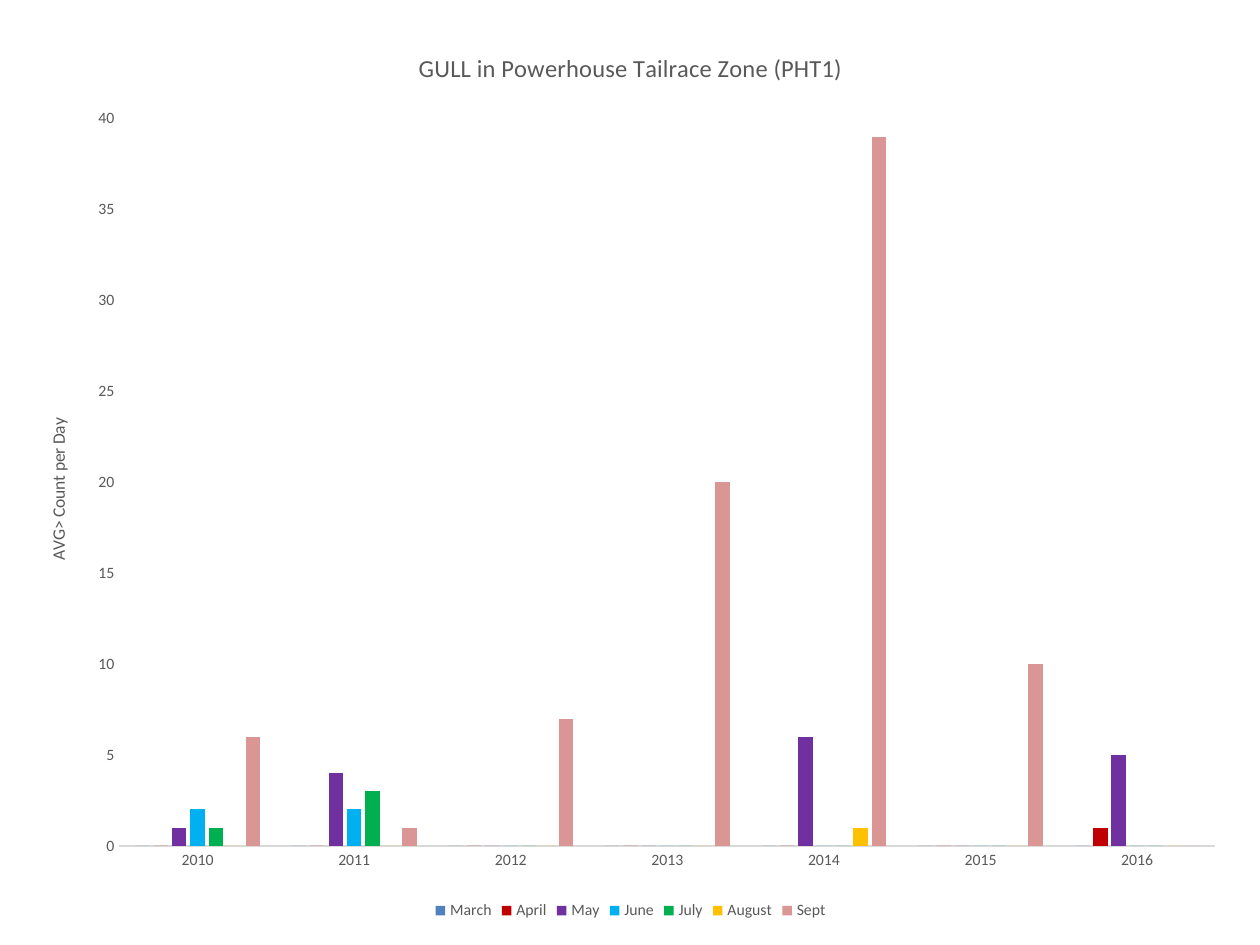
import pptx
import pptx.chart.data
import pptx.dml.color
import pptx.enum.chart
import pptx.util
from dataclasses import dataclass

Inches = pptx.util.Inches
RGB = pptx.dml.color.RGBColor

GREY = RGB(0x59, 0x59, 0x59)
PALE = RGB(0xD9, 0xD9, 0xD9)
BLUE = RGB(0x4F, 0x81, 0xBD)
RED = RGB(0xC0, 0x00, 0x00)
PURPLE = RGB(0x70, 0x30, 0xA0)
SKY = RGB(0x00, 0xB0, 0xF0)
GREEN = RGB(0x00, 0xB0, 0x50)
GOLD = RGB(0xFF, 0xC0, 0x00)
PINK = RGB(0xD9, 0x96, 0x94)

YEARS = [str(year) for year in range(2010, 2017)]


@dataclass
class Month:
    name: str
    color: RGB
    counts: tuple[int, ...]


MONTHS = [
    Month("March", BLUE, (0, 0, 0, 0, 0, 0, 0)),
    Month("April", RED, (0, 0, 0, 0, 0, 0, 1)),
    Month("May", PURPLE, (1, 4, 0, 0, 6, 0, 5)),
    Month("June", SKY, (2, 2, 0, 0, 0, 0, 0)),
    Month("July", GREEN, (1, 3, 0, 0, 0, 0, 0)),
    Month("August", GOLD, (0, 0, 0, 0, 1, 0, 0)),
    Month("Sept", PINK, (6, 1, 7, 20, 39, 10, 0)),
]


def set_font(font: pptx.text.text.Font, size: float) -> None:
    font.name = "Calibri"
    font.size = pptx.util.Pt(size)
    font.bold = False
    font.color.rgb = GREY


def add_title(frame: pptx.text.text.TextFrame, text: str, size: float) -> None:
    run = frame.paragraphs[0].add_run()
    run.text = text
    set_font(run.font, size)


def style_axes(chart: pptx.chart.chart.Chart) -> None:
    years, counts = chart.category_axis, chart.value_axis
    for axis in (years, counts):
        axis.has_major_gridlines = False
        axis.major_tick_mark = pptx.enum.chart.XL_TICK_MARK.NONE
        axis.minor_tick_mark = pptx.enum.chart.XL_TICK_MARK.NONE
        set_font(axis.tick_labels.font, 9)
    years.format.line.color.rgb = PALE
    years.format.line.width = pptx.util.Pt(0.75)
    counts.format.line.fill.background()
    counts.minimum_scale = 0
    counts.maximum_scale = 40
    counts.major_unit = 5
    counts.tick_labels.number_format = "0"
    counts.tick_labels.number_format_is_linked = False
    add_title(counts.axis_title.text_frame, "AVG> Count per Day", 10)


def add_graph(slide: pptx.slide.Slide, months: list[Month]) -> None:
    data = pptx.chart.data.CategoryChartData(number_format="0")
    data.categories = YEARS
    for month in months:
        data.add_series(month.name, month.counts)
    chart = slide.shapes.add_chart(
        pptx.enum.chart.XL_CHART_TYPE.COLUMN_CLUSTERED,
        Inches(0.17), Inches(0.17), Inches(9.67), Inches(7.17), data,
    ).chart
    set_font(chart.font, 10)
    add_title(chart.chart_title.text_frame, "GULL in Powerhouse Tailrace Zone (PHT1)", 14)
    chart.chart_title.include_in_layout = False
    style_axes(chart)

    plot = chart.plots[0]
    plot.gap_width = 219
    plot.overlap = -27
    plot.vary_by_categories = False
    for series, month in zip(plot.series, months):
        series.invert_if_negative = False
        series.format.fill.solid()
        series.format.fill.fore_color.rgb = month.color

    chart.has_legend = True
    chart.legend.position = pptx.enum.chart.XL_LEGEND_POSITION.BOTTOM
    chart.legend.include_in_layout = False
    set_font(chart.legend.font, 9)


def main() -> None:
    deck = pptx.Presentation()
    deck.slide_width = Inches(10)
    deck.slide_height = Inches(7.5)
    slide = deck.slides.add_slide(deck.slide_layouts[6])
    add_graph(slide, MONTHS)
    deck.save("out.pptx")


if __name__ == "__main__":
    main()
